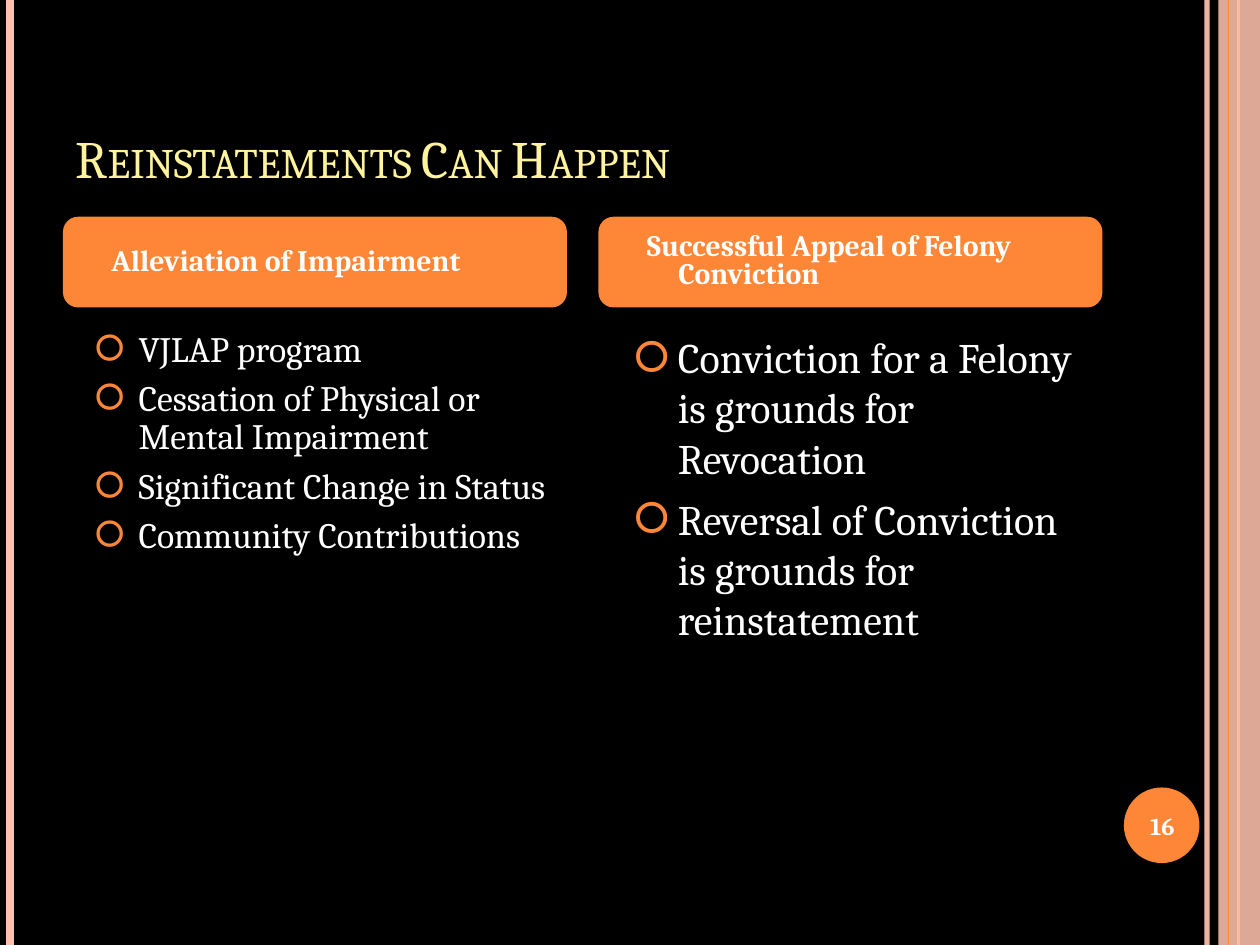
import pptx
import pptx.util
import pptx.dml.color
import pptx.enum.dml
import pptx.enum.shapes
import pptx.enum.text
import pptx.oxml
import pptx.oxml.ns
from lxml import etree

Inches = pptx.util.Inches
Pt = pptx.util.Pt
qn = pptx.oxml.ns.qn
Shape = pptx.enum.shapes.MSO_SHAPE
Anchor = pptx.enum.text.MSO_ANCHOR
Align = pptx.enum.text.PP_ALIGN

FONT = "Cambria"
COLORS = {
    "back": "000000",
    "text": "FFFFFF",
    "title": "FFF39D",
    "accent": "FE8637",
    "pale": "FEC2AC",
}


def color(name):
    return pptx.dml.color.RGBColor.from_string(COLORS[name])


def paint(fill, name, alpha=100):
    fill.solid()
    fill.fore_color.rgb = color(name)
    if alpha < 100:
        for node in fill._xPr.iter(qn("a:srgbClr")):
            etree.SubElement(node, qn("a:alpha"), val=str(alpha * 1000))


def place(shape, left, top, width, height):
    shape.left, shape.top = Inches(left), Inches(top)
    shape.width, shape.height = Inches(width), Inches(height)


def style(para, size, name="text", bold=False):
    font = para.font
    font.name, font.size, font.bold = FONT, Pt(size), bold
    font.color.rgb = color(name)


def setup(frame, anchor):
    frame.word_wrap = True
    frame.auto_size = pptx.enum.text.MSO_AUTO_SIZE.NONE
    frame.vertical_anchor = anchor


def indent(para, hang, bullet=None):
    props = para._p.get_or_add_pPr()
    props.set("marL", str(Inches(0.5)))
    props.set("indent", str(-Inches(hang)))
    if bullet:
        tint = etree.SubElement(props, qn("a:buClr"))
        etree.SubElement(tint, qn("a:srgbClr"), val=COLORS["accent"])
        etree.SubElement(props, qn("a:buChar"), char=bullet)
    else:
        etree.SubElement(props, qn("a:buNone"))


def add_rail(slide, x, width, name, alpha=100):
    kind = pptx.enum.shapes.MSO_CONNECTOR.STRAIGHT
    rail = slide.shapes.add_connector(kind, Inches(x), 0, Inches(x), Inches(7.5))
    rail.line.width = Pt(width)
    paint(rail.line.fill, name, alpha)
    etree.SubElement(rail._element.spPr, qn("a:effectLst"))


def add_solid(slide, kind, box, name, alpha=100):
    shape = slide.shapes.add_shape(kind, *map(Inches, box))
    shape.shadow.inherit = False
    paint(shape.fill, name, alpha)
    shape.line.fill.background()


def add_page(slide, text):
    add_solid(slide, Shape.OVAL, (8.92, 6.25, 0.6, 0.6), "accent")
    box = slide.shapes.add_textbox(*map(Inches, (8.89, 6.27, 0.67, 0.57)))
    setup(box.text_frame, Anchor.MIDDLE)
    para = box.text_frame.paragraphs[0]
    para.text = text
    para.alignment = Align.CENTER
    style(para, 14, bold=True)


def fill_title(title, text):
    place(title, 0.5, 0.3, 8.25, 1.25)
    setup(title.text_frame, Anchor.BOTTOM)
    para = title.text_frame.paragraphs[0]
    para.text = text
    para.alignment = Align.LEFT
    para.runs[0]._r.get_or_add_rPr().set("cap", "small")
    style(para, 30, "title")


def fill_head(head, left, text, space):
    place(head, left, 1.72, 4, 0.72)
    form = etree.SubElement(head._element.spPr, qn("a:prstGeom"), prst="roundRect")
    guides = etree.SubElement(form, qn("a:avLst"))
    etree.SubElement(guides, qn("a:gd"), name="adj", fmla="val 16700")
    paint(head.fill, "accent")
    setup(head.text_frame, Anchor.MIDDLE)
    para = head.text_frame.paragraphs[0]
    para.text = text
    para.line_spacing = space
    para.space_before = Pt(0)
    indent(para, 0.25)
    style(para, 17, bold=True)


def fill_list(body, left, items, size, space):
    place(body, left, 2.58, 4, 4.25)
    frame = body.text_frame
    setup(frame, Anchor.TOP)
    for i, item in enumerate(items):
        para = frame.add_paragraph() if i else frame.paragraphs[0]
        para.text = item
        para.line_spacing = space
        para.space_before = Pt(6 if i else 0)
        indent(para, 0.34, "🞆")
        style(para, size)


def main():
    deck = pptx.Presentation()
    deck.slide_width, deck.slide_height = Inches(10), Inches(7.5)
    slide = deck.slides.add_slide(deck.slide_layouts.get_by_name("Comparison"))
    paint(slide.background.fill, "back")

    add_rail(slide, 9.58, 3, "pale", 93)
    add_rail(slide, 0.08, 4.5, "pale")
    add_rail(slide, 9.83, 1.5, "accent")
    add_solid(slide, Shape.RECTANGLE, (9.67, 0, 0.33, 7.5), "pale", 87)
    add_rail(slide, 9.75, 0.75, "accent")
    add_page(slide, "16")

    title, head1, list1, head2, list2 = slide.placeholders
    fill_title(title, "Reinstatements Can Happen")
    fill_head(head1, 0.5, "Alleviation of Impairment", 0.9)
    fill_list(list1, 0.5, [
        "VJLAP program",
        "Cessation of Physical or Mental Impairment",
        "Significant Change in Status",
        "Community Contributions",
    ], 20.4, 0.9)
    fill_head(head2, 4.75, "Successful Appeal of Felony Conviction", 0.8)
    fill_list(list2, 4.78, [
        "Conviction for a Felony is grounds for Revocation",
        "Reversal of Conviction is grounds for reinstatement",
    ], 24, 1)
    deck.save("out.pptx")


if __name__ == "__main__":
    main()
